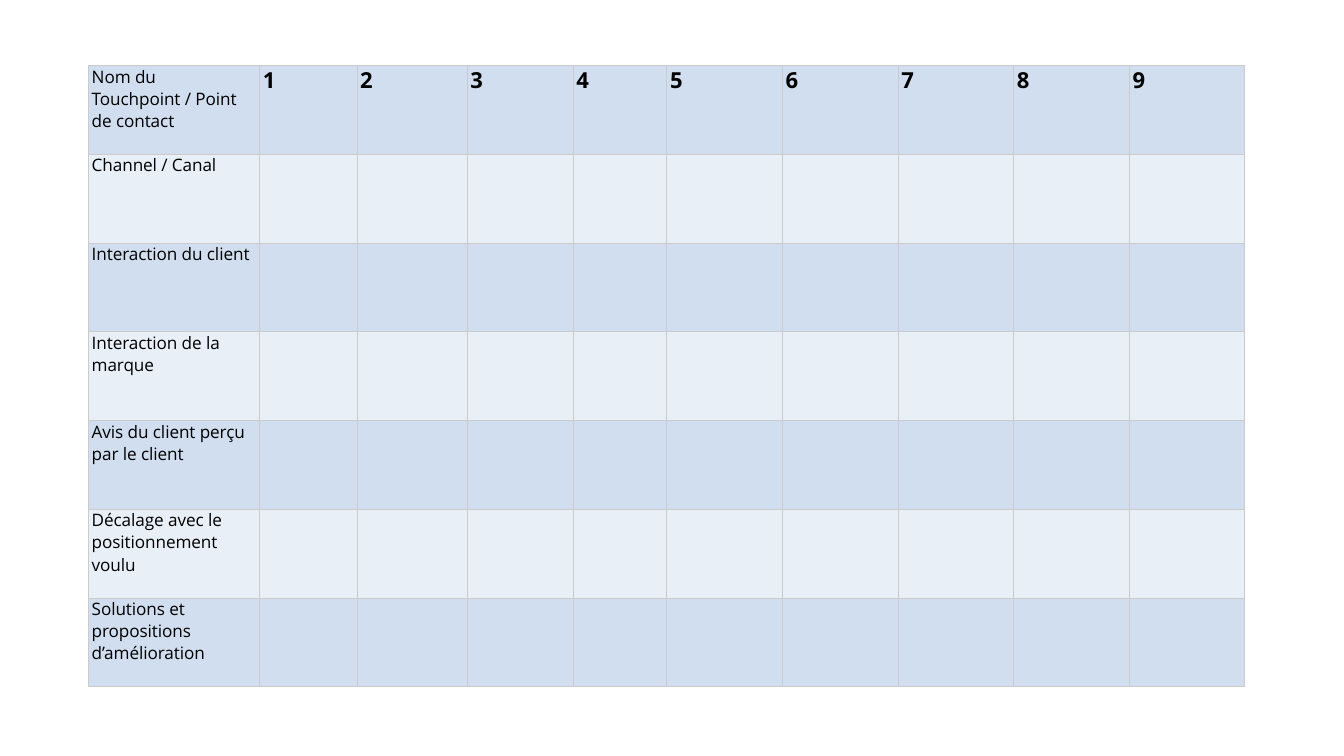
from lxml.etree import SubElement as Sub
from pptx import Presentation
from pptx.dml.color import RGBColor as Rgb
from pptx.oxml.ns import qn
from pptx.util import Inches, Pt

HUES = {"dark": "D0DEEF", "light": "E9EFF7", "rule": "CBCBCB", "ink": "000000"}
WIDTHS = [3.39, 1.93, 2.18, 2.1, 1.86] + [2.29] * 5
LABELS = [
    "Nom du Touchpoint / Point de contact",
    "Channel / Canal",
    "Interaction du client",
    "Interaction de la marque",
    "Avis du client perçu par le client",
    "Décalage avec le positionnement voulu",
    "Solutions et propositions d’amélioration",
]
LABEL = {"name": "Open Sans", "size": Pt(24.5), "bold": False}
NUMBER = {"name": "Open Sans", "size": Pt(31.5), "bold": True}
MARGINS = {
    "margin_left": Inches(0.07),
    "margin_right": Inches(0.07),
    "margin_top": 0,
    "margin_bottom": 0,
}
PARA = {"line_spacing": 0.95, "space_before": Pt(6)}
PLAIN = {"first_row": False, "horz_banding": False}


def apply(item, form):
    """Set each attribute of item from a dict of format values."""
    for key, value in form.items():
        setattr(item, key, value)


def style_cell(cell, hue):
    """Give a cell its margins, thin borders and fill."""
    apply(cell, MARGINS)
    props = cell._tc.get_or_add_tcPr()
    for side in "LRTB":
        line = Sub(props, qn(f"a:ln{side}"), w=str(Pt(0.5)))
        Sub(Sub(line, qn("a:solidFill")), qn("a:srgbClr"), val=HUES["rule"])
    cell.fill.solid()
    cell.fill.fore_color.rgb = Rgb.from_string(hue)


def write_cell(cell, text, form):
    """Write one run of text in a cell."""
    para = cell.text_frame.paragraphs[0]
    apply(para, PARA)
    run = para.add_run()
    run.text = text
    apply(run.font, form)
    run.font.color.rgb = Rgb.from_string(HUES["ink"])
    run._r.get_or_add_rPr().set("spc", "-10")


def add_grid(slide, left, top, width, height):
    """Place the touchpoint table in the given box."""
    rows, cols = len(LABELS), len(WIDTHS)
    box = [Inches(size) for size in (left, top, width, height)]
    table = slide.shapes.add_table(rows, cols, *box).table
    apply(table, PLAIN)
    scale = width / sum(WIDTHS)
    for col, size in zip(table.columns, WIDTHS):
        col.width = Inches(size * scale)
    for i, label in enumerate(LABELS):
        table.rows[i].height = Inches(height / rows)
        for cell in table.rows[i].cells:
            style_cell(cell, HUES["light" if i % 2 else "dark"])
        write_cell(table.cell(i, 0), label, LABEL)
    for j in range(1, cols):
        write_cell(table.cell(0, j), str(j), NUMBER)


def main():
    """Build the slide and save it."""
    deck = Presentation()
    apply(deck, {"slide_width": Inches(26.67), "slide_height": Inches(15)})
    slide = deck.slides.add_slide(deck.slide_layouts[6])
    add_grid(slide, 1.75, 1.3, 22.95, 12.32)
    deck.save("out.pptx")


if __name__ == "__main__":
    main()
